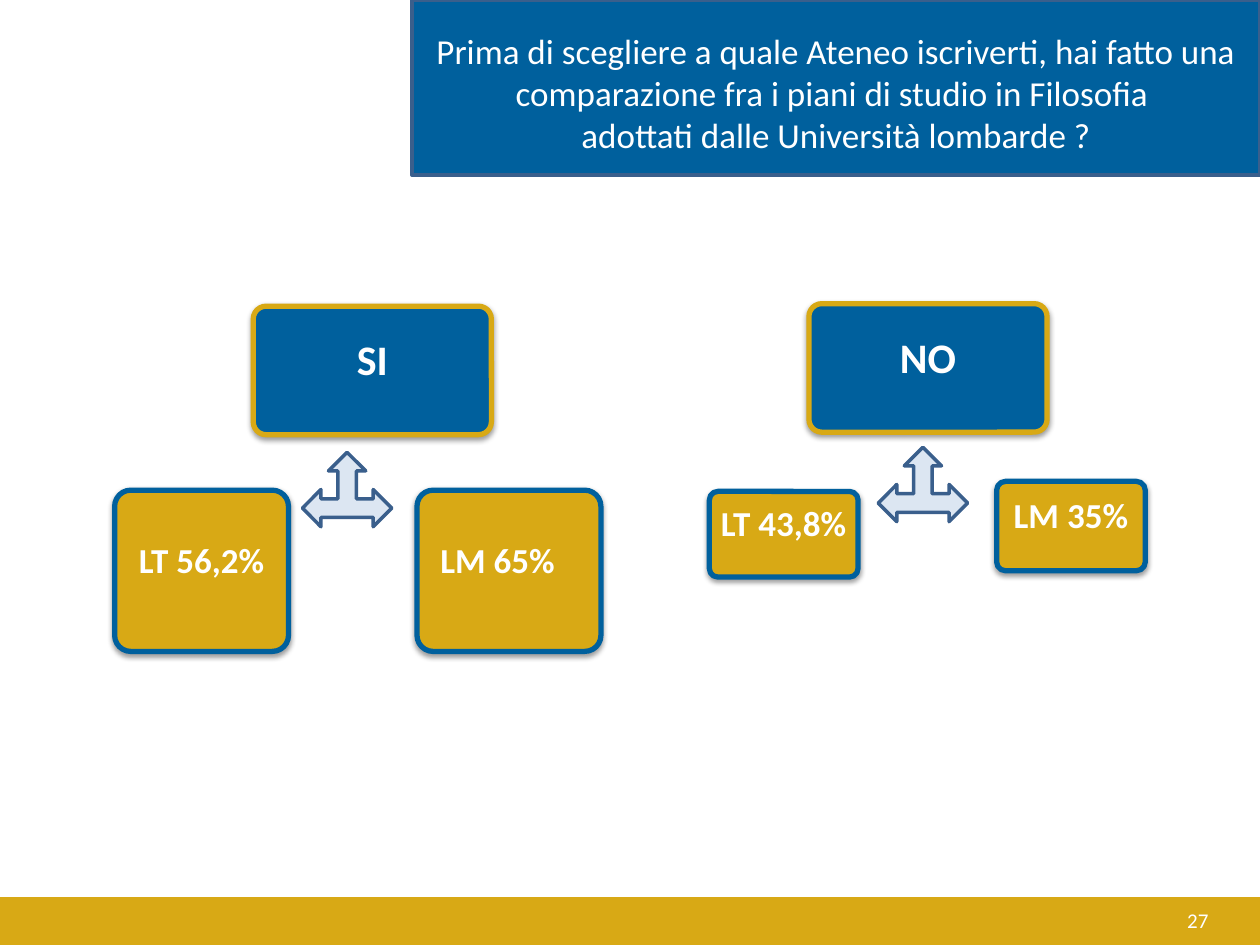
from lxml import etree
from pptx import Presentation
from pptx.dml.color import RGBColor
from pptx.enum import shapes, text
from pptx.oxml import ns
from pptx.util import Inches, Pt

BLUE = RGBColor(0x00, 0x60, 0x9D)
GOLD = RGBColor(0xD8, 0xA9, 0x15)
OUTLINE = RGBColor(0x3A, 0x5F, 0x8C)
PALE = RGBColor(0xDC, 0xE6, 0xF2)
WHITE = RGBColor(0xFF, 0xFF, 0xFF)
SHAPE = shapes.MSO_SHAPE
ALIGN = text.PP_ALIGN


def add_panel(slide, kind, box, fill, line=None, width=2):
    """Add a filled preset shape without the theme shadow."""
    panel = slide.shapes.add_shape(kind, *map(Inches, box))
    panel.shadow.inherit = False
    panel.fill.solid()
    panel.fill.fore_color.rgb = fill
    if line is None:
        panel.line.fill.background()
    else:
        panel.line.color.rgb = line
        panel.line.width = Pt(width)
    return panel


def add_soft_shadow(panel):
    """Give a panel a soft shadow that falls straight down."""
    effects = panel._element.spPr.find(ns.qn("a:effectLst"))
    shadow = etree.SubElement(effects, ns.qn("a:outerShdw"), blurRad=str(Pt(3.1)),
                              dist=str(Pt(1.6)), dir="5400000", rotWithShape="0")
    color = etree.SubElement(shadow, ns.qn("a:srgbClr"), val="000000")
    etree.SubElement(color, ns.qn("a:alpha"), val="38000")


def write(frame, lines, size, align, bold=False, wrap=True):
    """Write lines as one vertically centred paragraph."""
    frame.word_wrap = wrap
    frame.vertical_anchor = text.MSO_ANCHOR.MIDDLE
    paragraph = frame.paragraphs[0]
    paragraph.alignment = align
    for index, line in enumerate(lines):
        if index:
            paragraph.add_line_break()
        run = paragraph.add_run()
        run.text = line
        run.font.name = "Calibri"
        run.font.size = Pt(size)
        run.font.bold = bold
        run.font.color.rgb = WHITE


def add_node(slide, box, label, size, fill, line, right_inset=0.09):
    """Add a rounded node with a bold label."""
    node = add_panel(slide, SHAPE.ROUNDED_RECTANGLE, box, fill, line, 3)
    node.adjustments[0] = 0.1
    add_soft_shadow(node)
    frame = node.text_frame
    frame.margin_left = frame.margin_top = Inches(0.09)
    frame.margin_right = Inches(right_inset)
    frame.margin_bottom = Inches(0.27)
    write(frame, [label], size, ALIGN.CENTER, bold=True, wrap=False)


def add_answer_tree(slide, left, top, answer, answer_offset, arrow_offset, shares):
    """Add an answer, its three-way arrow and the shares below it."""
    add_node(slide, (left + answer_offset, top, 1.89, 1.02), answer, 24, BLUE, GOLD)
    for label, (x, y, width, height), right_inset in shares:
        add_node(slide, (left + x, top + y, width, height), label, 20, GOLD, BLUE, right_inset)
    x, y = arrow_offset
    add_panel(slide, SHAPE.LEFT_RIGHT_UP_ARROW, (left + x, top + y, 0.71, 0.59), PALE, OUTLINE)


def add_header(slide, left, top, width, height):
    """Add the question on its blue panel."""
    add_panel(slide, SHAPE.RECTANGLE, (left, top, width, height), BLUE, OUTLINE)
    question = slide.shapes.add_textbox(*map(Inches, (left, top + 0.16, width, 1.15)))
    write(question.text_frame,
          ["Prima di scegliere a quale Ateneo iscriverti, hai fatto una "
           "comparazione fra i piani di studio in Filosofia ",
           "adottati dalle Università lombarde ?"], 20, ALIGN.CENTER)


def add_footer(slide, left, top, width, height):
    """Add the gold band and the page number."""
    add_panel(slide, SHAPE.RECTANGLE, (left, top, width, height), GOLD)
    number = slide.shapes.add_textbox(*map(Inches, (left + 7.36, top - 0.02, 2.33, 0.4)))
    write(number.text_frame, ["27"], 12, ALIGN.RIGHT)


def main():
    """Build and save the slide."""
    deck = Presentation()
    deck.slide_width, deck.slide_height = Inches(10), Inches(7.5)
    slide = deck.slides.add_slide(deck.slide_layouts[6])
    add_footer(slide, 0, 7.12, 10, 0.38)
    add_header(slide, 3.27, 0, 6.73, 1.39)
    add_answer_tree(slide, 0.91, 2.43, "SI", 1.1, (1.49, 1.16), [
        ("LT 56,2%", (0, 1.46, 1.38, 1.28), 0.09),
        ("LM 65%", (2.4, 1.46, 1.46, 1.28), 0.27),
    ])
    add_answer_tree(slide, 5.63, 2.41, "NO", 0.79, (1.34, 1.14), [
        ("LT 43,8%", (0, 1.49, 1.18, 0.68), 0.09),
        ("LM 35%", (2.28, 1.41, 1.18, 0.71), 0.09),
    ])
    deck.save("out.pptx")


if __name__ == "__main__":
    main()
